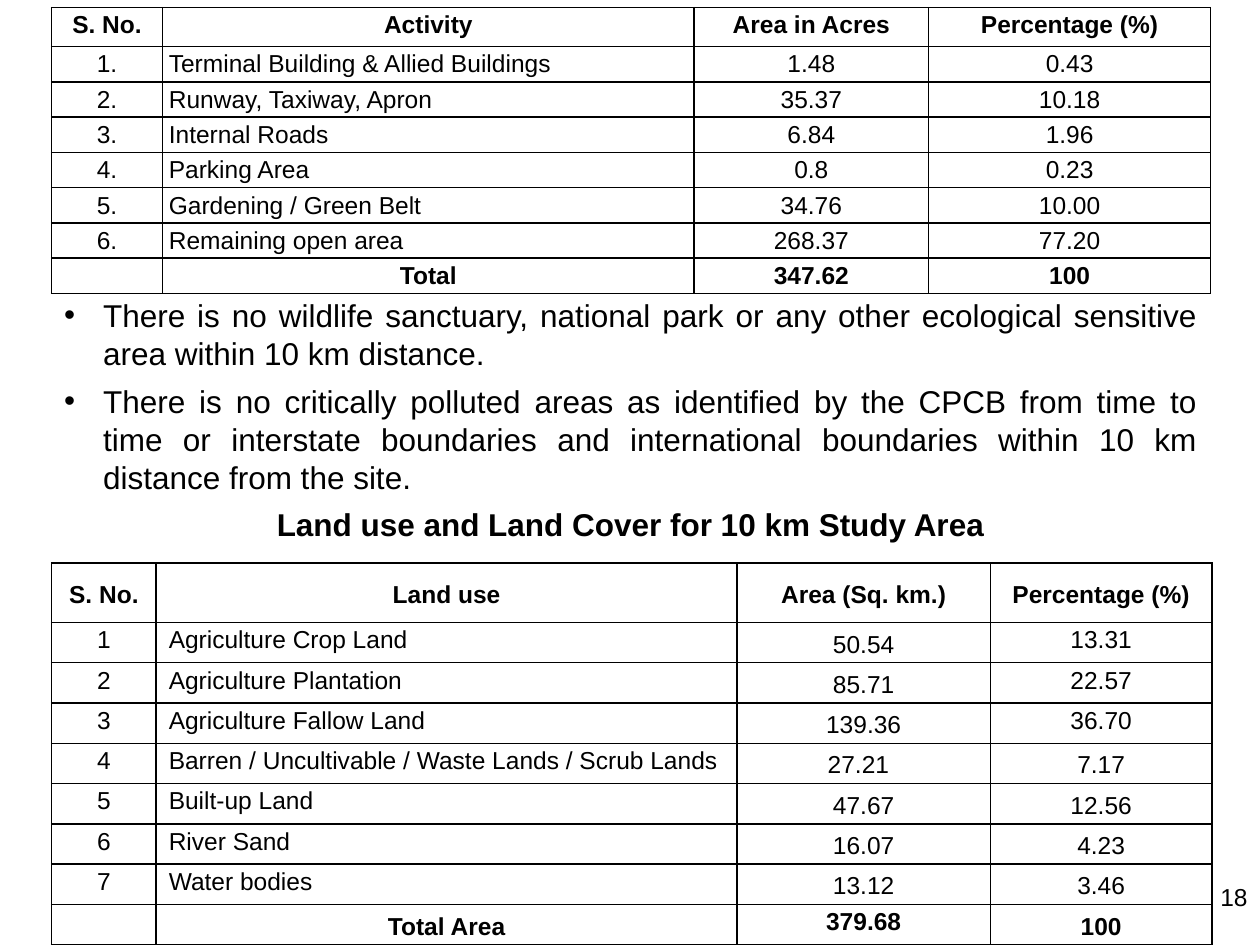
from lxml import etree
from pptx import Presentation
from pptx.dml.color import RGBColor
from pptx.enum.text import MSO_ANCHOR, MSO_AUTO_SIZE, PP_ALIGN
from pptx.oxml.ns import qn
from pptx.util import Inches, Pt

LEFT, CENTER, RIGHT, JUSTIFY = PP_ALIGN.LEFT, PP_ALIGN.CENTER, PP_ALIGN.RIGHT, PP_ALIGN.JUSTIFY
TOP, MIDDLE = MSO_ANCHOR.TOP, MSO_ANCHOR.MIDDLE
FIXED = MSO_AUTO_SIZE.NONE
TITLE_ONLY = 5
FONT = "Arial"
COLORS = {"text": "000000", "border": "000000", "background": "FFFFFF"}

SITE_AREAS = [
    ["S. No.", "Activity", "Area in Acres", "Percentage (%)"],
    ["1.", "Terminal Building & Allied Buildings", "1.48", "0.43"],
    ["2.", "Runway, Taxiway, Apron", "35.37", "10.18"],
    ["3.", "Internal Roads", "6.84", "1.96"],
    ["4.", "Parking Area", "0.8", "0.23"],
    ["5.", "Gardening / Green Belt", "34.76", "10.00"],
    ["6.", "Remaining open area", "268.37", "77.20"],
    ["", "Total", "347.62", "100"],
]
LAND_USES = [
    ["S. No.", "Land use", "Area (Sq. km.)", "Percentage (%)"],
    ["1", "Agriculture Crop Land", "50.54", "13.31"],
    ["2", "Agriculture Plantation", "85.71", "22.57"],
    ["3", "Agriculture Fallow Land", "139.36", "36.70"],
    ["4", "Barren / Uncultivable / Waste Lands / Scrub Lands", "27.21", "7.17"],
    ["5", "Built-up Land", "47.67", "12.56"],
    ["6", "River Sand", "16.07", "4.23"],
    ["7", "Water bodies", "13.12", "3.46"],
    ["", "Total Area", "379.68", "100"],
]
FINDINGS = [
    "There is no wildlife sanctuary, national park or any other ecological "
    "sensitive area within 10 km distance.",
    "There is no critically polluted areas as identified by the CPCB from time to "
    "time or interstate boundaries and international boundaries within 10 km "
    "distance from the site.",
]


def format_paragraph(paragraph, size, align, bold=False):
    paragraph.alignment = align
    for run in paragraph.runs:
        run.font.name = FONT
        run.font.size = Pt(size)
        run.font.bold = bold
        run.font.color.rgb = RGBColor.from_string(COLORS["text"])


def set_indent(paragraph, margin, first_line=0):
    properties = paragraph._p.get_or_add_pPr()
    properties.set("marL", str(Inches(margin)))
    properties.set("indent", str(Inches(first_line)))
    return properties


def add_text(slide, box, paragraphs, size, align):
    frame = slide.shapes.add_textbox(*map(Inches, box)).text_frame
    frame.word_wrap = True
    frame.text = "\n".join(paragraphs)
    for paragraph in frame.paragraphs:
        format_paragraph(paragraph, size, align)
    return frame


def add_findings(slide):
    frame = add_text(slide, (0.41, 2.3, 9.19, 1.7), FINDINGS, 18, JUSTIFY)
    for paragraph in frame.paragraphs:
        paragraph.space_after = Pt(6)
        properties = set_indent(paragraph, 0.31, -0.31)
        etree.SubElement(properties, qn("a:buFont"), typeface=FONT)
        etree.SubElement(properties, qn("a:buChar"), char="•")


def set_heading(slide, text):
    heading = slide.shapes.title
    heading.left, heading.top = Inches(1.67), Inches(3.96)
    heading.width, heading.height = Inches(6.67), Inches(0.4)
    frame = heading.text_frame
    frame.text = text
    frame.auto_size = FIXED
    frame.vertical_anchor = TOP
    format_paragraph(frame.paragraphs[0], 18, CENTER, bold=True)


def outline_cell(cell):
    properties = cell._tc.get_or_add_tcPr()
    for side in ("a:lnL", "a:lnR", "a:lnT", "a:lnB"):
        line = etree.SubElement(properties, qn(side), w=str(Pt(1)))
        fill = etree.SubElement(line, qn("a:solidFill"))
        etree.SubElement(fill, qn("a:srgbClr"), val=COLORS["border"])
    cell.fill.background()


def fill_cell(cell, text, align, bold, inset):
    cell.text = text
    cell.margin_left = cell.margin_right = Inches(inset)
    cell.margin_top = cell.margin_bottom = 0
    paragraph = cell.text_frame.paragraphs[0]
    paragraph.line_spacing = 1.15
    format_paragraph(paragraph, 14, align, bold)
    if not text:
        etree.SubElement(paragraph._p, qn("a:endParaRPr"), sz="1400")
    outline_cell(cell)


def add_area_table(slide, top, rows, widths, header_height, row_height, name_align, inset):
    last = len(rows) - 1
    height = header_height + last * row_height
    table = slide.shapes.add_table(
        len(rows), len(widths), Inches(0.41), Inches(top), Inches(sum(widths)), Inches(height)
    ).table
    table.first_row = table.horz_banding = False
    for column, width in zip(table.columns, widths):
        column.width = Inches(width)
    for r, row in enumerate(rows):
        table.rows[r].height = Inches(row_height if r else header_height)
        outer = r in (0, last)
        for c, text in enumerate(row):
            align = name_align if c == 1 and not outer else CENTER
            fill_cell(table.cell(r, c), text, align, outer, inset if r else 0.07)
    return table


def place_land_use_text(table):
    last = len(LAND_USES) - 1
    for r in range(last + 1):
        for c in range(4):
            middle = (r == 0 or (c == 2 and r < last) or (c == 3 and r >= 4)
                      or (c == 1 and r == last))
            table.cell(r, c).vertical_anchor = MIDDLE if middle else TOP
        if 0 < r < last:
            set_indent(table.cell(r, 1).text_frame.paragraphs[0], 0.03)
    barren_area = table.cell(4, 2).text_frame.paragraphs[0]
    barren_area.alignment = LEFT
    set_indent(barren_area, 0.65)


def main():
    presentation = Presentation()
    presentation.slide_width, presentation.slide_height = Inches(10), Inches(7.5)
    slide = presentation.slides.add_slide(presentation.slide_layouts[TITLE_ONLY])
    slide.background.fill.solid()
    slide.background.fill.fore_color.rgb = RGBColor.from_string(COLORS["background"])

    add_text(slide, (7.67, 6.95, 2.33, 0.52), ["18"], 14, RIGHT)
    add_findings(slide)
    set_heading(slide, "Land use and Land Cover for 10 km Study Area")
    add_area_table(slide, 0.06, SITE_AREAS, (0.88, 4.22, 1.86, 2.24), 0.31, 0.28, JUSTIFY, 0.05)
    land_uses = add_area_table(
        slide, 4.47, LAND_USES, (0.83, 4.61, 2.01, 1.76), 0.47, 0.32, LEFT, 0.07
    )
    place_land_use_text(land_uses)
    presentation.save("out.pptx")


if __name__ == "__main__":
    main()
